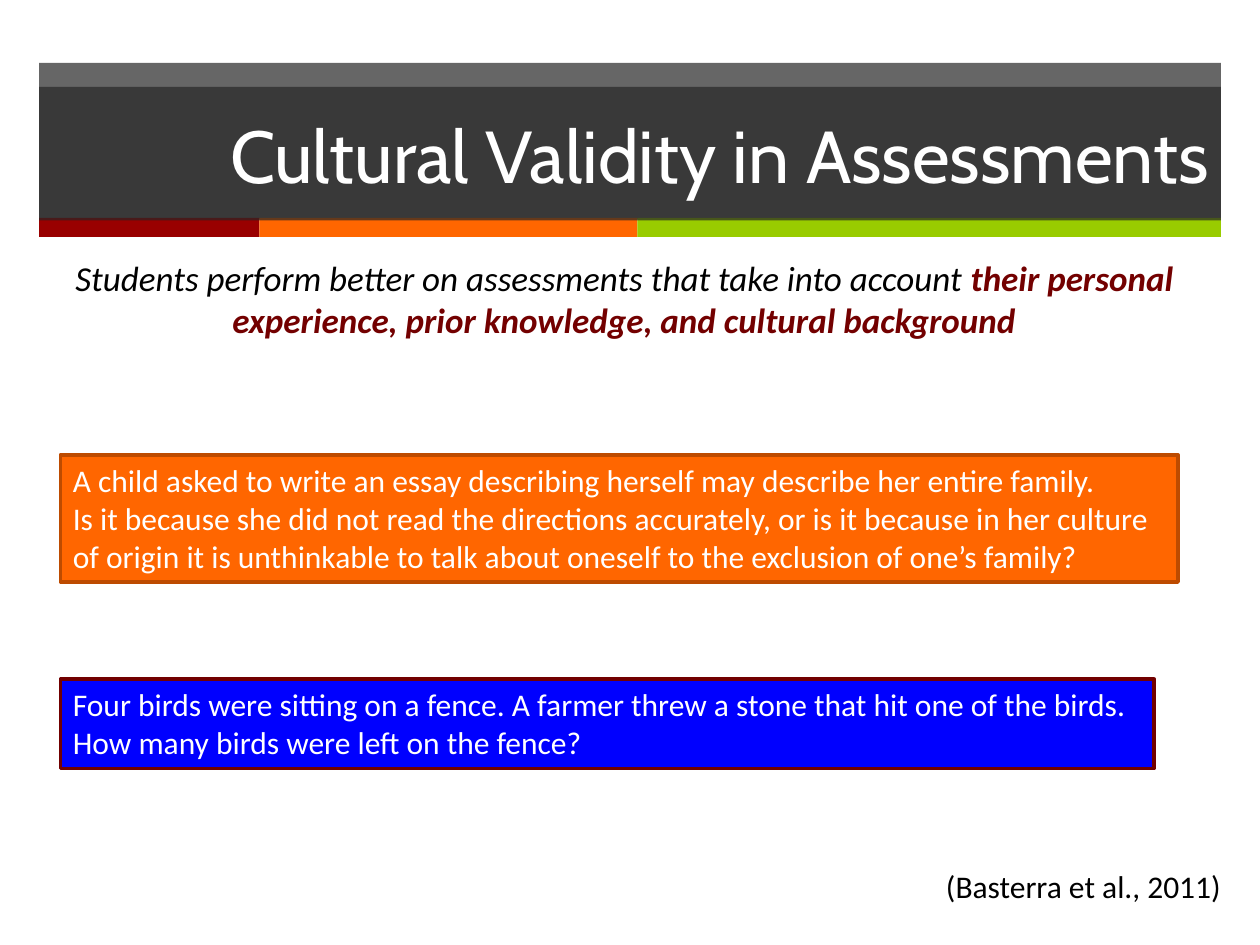
import pptx
import pptx.util
import pptx.dml.color
import pptx.enum.shapes
import pptx.enum.text
import pptx.oxml
import pptx.oxml.ns

Inches = pptx.util.Inches
Pt = pptx.util.Pt
RGBColor = pptx.dml.color.RGBColor
Align = pptx.enum.text.PP_ALIGN
Anchor = pptx.enum.text.MSO_ANCHOR
AutoSize = pptx.enum.text.MSO_AUTO_SIZE

WHITE = RGBColor(0xFF, 0xFF, 0xFF)
BLACK = RGBColor(0x00, 0x00, 0x00)
CHARCOAL = RGBColor(0x26, 0x26, 0x26)
RED = RGBColor(0x99, 0x00, 0x00)
ORANGE = RGBColor(0xFF, 0x66, 0x00)
GREEN = RGBColor(0x99, 0xCC, 0x00)
DARK_RED = RGBColor(0x73, 0x00, 0x00)
BROWN = RGBColor(0xBD, 0x4B, 0x00)
BLUE = RGBColor(0x00, 0x00, 0xFF)
MAROON = RGBColor(0x71, 0x00, 0x00)


def format_run(run, size, color, font_name="Calibri"):
    run.font.size = Pt(size)
    run.font.name = font_name
    run.font.color.rgb = color


def fill_solid(shape, color, opacity=100):
    shape.fill.solid()
    shape.fill.fore_color.rgb = color
    if opacity < 100:
        color_element = shape.fill._xPr.find(".//" + pptx.oxml.ns.qn("a:srgbClr"))
        alpha = pptx.oxml.parse_xml(
            f'<a:alpha {pptx.oxml.ns.nsdecls("a")} val="{opacity * 1000}"/>')
        color_element.append(alpha)


def add_rectangle(slide, left, top, width, height, color, opacity=100):
    shape = slide.shapes.add_shape(
        pptx.enum.shapes.MSO_SHAPE.RECTANGLE,
        Inches(left), Inches(top), Inches(width), Inches(height))
    shape.shadow.inherit = False
    shape.line.fill.background()
    fill_solid(shape, color, opacity)
    return shape


def add_header(slide, left, top, width, text):
    add_rectangle(slide, left, top, width, 1.24, CHARCOAL, 70)
    stripe_left = left
    for stripe_width, color in ((1.75, RED), (3, ORANGE), (width - 4.75, GREEN)):
        add_rectangle(slide, stripe_left, top + 1.23, stripe_width, 0.15, color)
        stripe_left += stripe_width

    title = slide.shapes.title
    slide.shapes._spTree.append(title._element)
    title.left, title.top = Inches(left), Inches(top + 0.19)
    title.width, title.height = Inches(width), Inches(1.06)
    fill_solid(title, CHARCOAL, 70)
    title.text_frame.text = text
    title.text_frame.vertical_anchor = Anchor.MIDDLE
    title.text_frame.auto_size = AutoSize.NONE
    paragraph = title.text_frame.paragraphs[0]
    paragraph.alignment = Align.RIGHT
    format_run(paragraph.runs[0], 42, WHITE, "Cabin")


def add_text(slide, left, top, width, height, alignment, pieces, size):
    text_box = slide.shapes.add_textbox(
        Inches(left), Inches(top), Inches(width), Inches(height))
    text_box.text_frame.word_wrap = True
    paragraph = text_box.text_frame.paragraphs[0]
    paragraph.alignment = alignment
    for text, color, bold, italic in pieces:
        run = paragraph.add_run()
        run.text = text
        format_run(run, size, color)
        run.font.bold = bold
        run.font.italic = italic


def add_example(slide, left, top, width, height, lines, color, line_color):
    box = add_rectangle(slide, left, top, width, height, color)
    box.line.color.rgb = line_color
    box.line.width = Pt(2)
    frame = box.text_frame
    frame.text = "\n".join(lines)
    frame.word_wrap = False
    frame.auto_size = AutoSize.SHAPE_TO_FIT_TEXT
    frame.vertical_anchor = Anchor.TOP
    for paragraph in frame.paragraphs:
        paragraph.alignment = Align.LEFT
        format_run(paragraph.runs[0], 18, WHITE)


def main():
    presentation = pptx.Presentation()
    presentation.slide_width = Inches(10)
    presentation.slide_height = Inches(7.5)
    slide = presentation.slides.add_slide(presentation.slide_layouts[5])

    add_header(slide, 0.31, 0.5, 9.38, "Cultural Validity in Assessments")
    add_text(slide, 0.22, 1.99, 9.47, 5.03, Align.CENTER, (
        ("Students perform better on assessments that take into account ",
         BLACK, False, True),
        ("their personal experience, prior knowledge, and cultural background",
         DARK_RED, True, True)), 20)
    add_example(slide, 0.48, 3.61, 8.87, 1.01, (
        "A child asked to write an essay describing herself may describe her entire family.",
        "Is it because she did not read the directions accurately, or is it because in her culture",
        "of origin it is unthinkable to talk about oneself to the exclusion of one’s family?"),
        ORANGE, BROWN)
    add_example(slide, 0.48, 5.39, 8.68, 0.71, (
        "Four birds were sitting on a fence. A farmer threw a stone that hit one of the birds.",
        "How many birds were left on the fence?"), BLUE, MAROON)
    add_text(slide, 7.41, 6.83, 2.43, 0.4, Align.LEFT,
             (("(Basterra et al., 2011)", BLACK, False, False),), 18)
    presentation.save("out.pptx")


if __name__ == "__main__":
    main()
